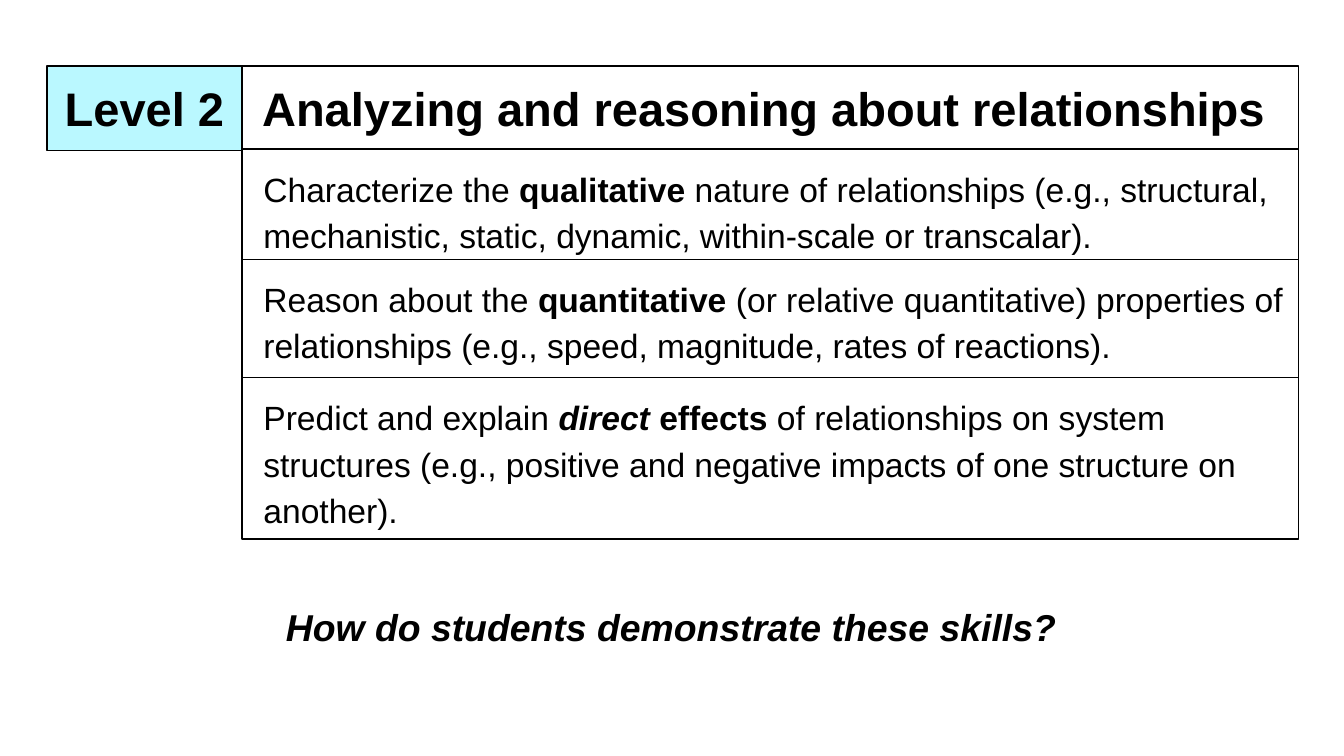
import dataclasses

import pptx
import pptx.dml.color
import pptx.enum.text
import pptx.oxml
import pptx.oxml.ns
import pptx.util

Inches = pptx.util.Inches
Align = pptx.enum.text.PP_ALIGN
Anchor = pptx.enum.text.MSO_ANCHOR


def rgb(value):
    return pptx.dml.color.RGBColor.from_string(value)


@dataclasses.dataclass(frozen=True)
class Theme:
    font: str = "Arial"
    ink: str = "000000"
    paper: str = "FFFFFF"
    accent: str = "BAF8FF"
    heading_size: float = 25.2
    body_size: float = 18
    question_size: float = 20
    line_width: float = 0.75


def write_text(frame, text, *, theme, size, align=Align.LEFT, anchor=Anchor.TOP,
               indent=0, line_spacing=1.0, space_after=0):
    """Write one paragraph; text is a list of (words, style), style holding b and/or i."""
    frame.word_wrap = True
    frame.vertical_anchor = anchor
    para = frame.paragraphs[0]
    para.alignment = align
    para.line_spacing = line_spacing
    para.space_before = pptx.util.Pt(0)
    para.space_after = pptx.util.Pt(space_after)
    properties = para._p.get_or_add_pPr()
    properties.set("marL", str(Inches(indent)))
    properties.set("indent", "0")
    properties.append(pptx.oxml.parse_xml(f"<a:buNone {pptx.oxml.ns.nsdecls('a')}/>"))
    for words, style in text:
        span = para.add_run()
        span.text = words
        span.font.name = theme.font
        span.font.size = pptx.util.Pt(size)
        span.font.bold = "b" in style
        span.font.italic = "i" in style
        span.font.color.rgb = rgb(theme.ink)


class SlideBuilder:
    def __init__(self, page, theme):
        self.page = page
        self.theme = theme

    def framed(self, index, left, top, width, height, fill):
        """Move a placeholder into place and give it a fill, an outline and even insets."""
        box = self.page.placeholders[index]
        box.left, box.top = Inches(left), Inches(top)
        box.width, box.height = Inches(width), Inches(height)
        box.fill.solid()
        box.fill.fore_color.rgb = rgb(fill)
        box.line.color.rgb = rgb(self.theme.ink)
        box.line.width = pptx.util.Pt(self.theme.line_width)
        frame = box.text_frame
        frame.auto_size = pptx.enum.text.MSO_AUTO_SIZE.NONE
        frame.margin_left = frame.margin_right = Inches(0.1)
        frame.margin_top = frame.margin_bottom = Inches(0.1)
        return frame

    def heading(self, index, text, *bounds, fill, **text_format):
        frame = self.framed(index, *bounds, fill)
        write_text(frame, [(text, "b")], theme=self.theme, size=self.theme.heading_size,
                   anchor=Anchor.MIDDLE, **text_format)

    def skill(self, index, text, *bounds):
        frame = self.framed(index, *bounds, self.theme.paper)
        write_text(frame, text, theme=self.theme, size=self.theme.body_size,
                   indent=0.06, line_spacing=1.15, space_after=12)

    def question(self, text, left, top, width, height):
        box = self.page.shapes.add_textbox(
            Inches(left), Inches(top), Inches(width), Inches(height))
        write_text(box.text_frame, [(text, "bi")], theme=self.theme,
                   size=self.theme.question_size, align=Align.CENTER)


SKILLS = [
    (1, 0.82, [("Characterize the ", ""), ("qualitative", "b"),
               (" nature of relationships (e.g., structural, mechanistic, static, "
                "dynamic, within-scale or transcalar).", "")]),
    (3, 0.88, [("Reason about the ", ""), ("quantitative", "b"),
               (" (or relative quantitative) properties of relationships "
                "(e.g., speed, magnitude, rates of reactions).", "")]),
    (4, 1.2, [("Predict and explain ", ""), ("direct", "bi"), (" effects", "b"),
              (" of relationships on system structures (e.g., positive and negative "
               "impacts of one structure on another).", "")]),
]


def main():
    deck = pptx.Presentation()
    deck.slide_width = Inches(10)
    deck.slide_height = deck.slide_width * 9 // 16
    comparison_layout = deck.slide_layouts[4]
    theme = Theme()
    builder = SlideBuilder(deck.slides.add_slide(comparison_layout), theme)

    top, heading_height = 0.49, 0.63
    builder.heading(0, "Analyzing and reasoning about relationships",
                    1.73, top, 7.93, heading_height, fill=theme.paper, indent=0.12)
    builder.heading(2, "Level 2", 0.35, top, 1.45, heading_height,
                    fill=theme.accent, align=Align.CENTER)

    row_top = 1.11
    for index, height, text in SKILLS:
        builder.skill(index, text, 1.8, row_top, 7.86, height)
        row_top += height

    builder.question("How do students demonstrate these skills?", 1.82, 4.45, 6.35, 0.44)
    deck.save("out.pptx")


if __name__ == "__main__":
    main()
